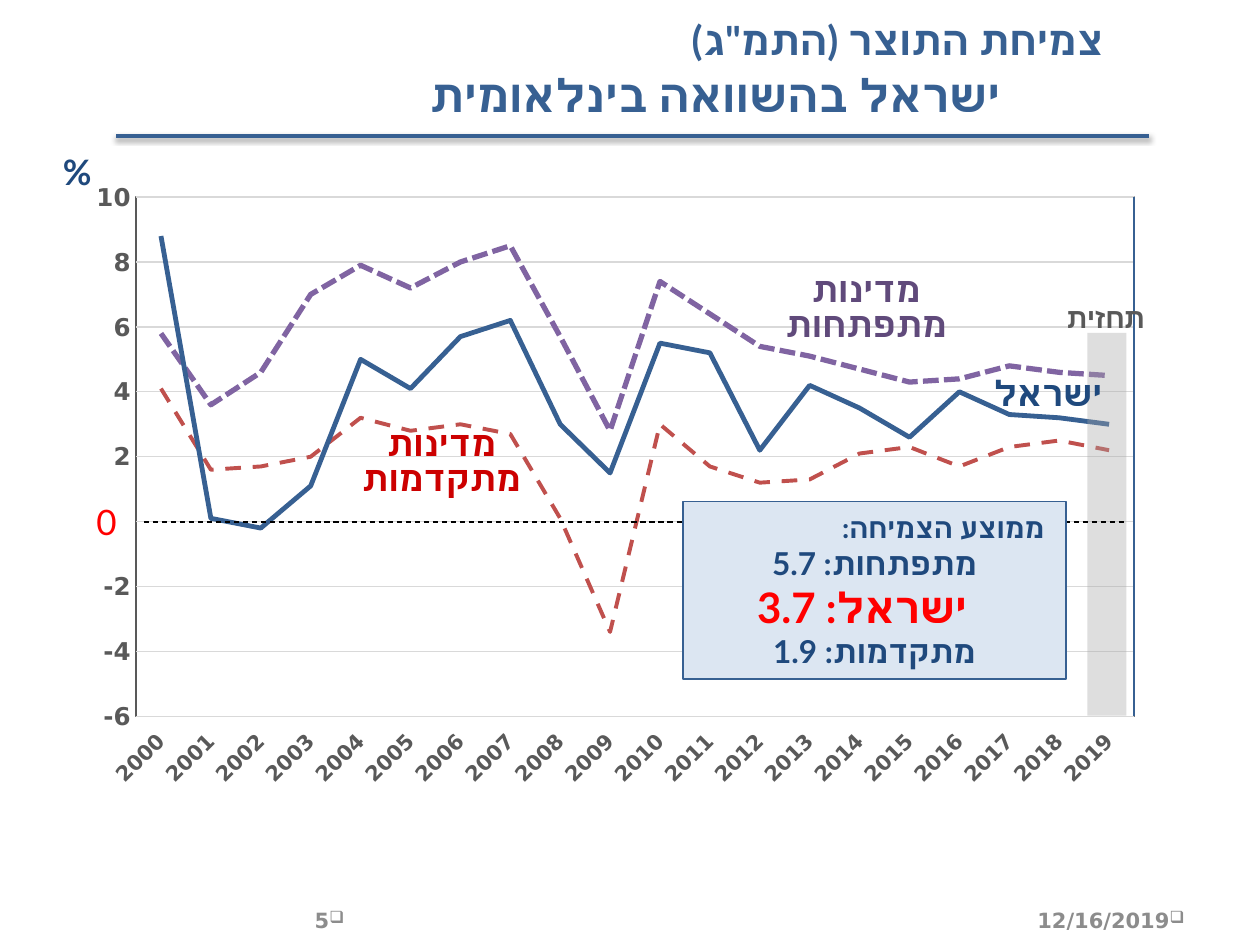
import pptx
import pptx.chart.data
import pptx.dml.color
import pptx.enum.chart
import pptx.enum.dml
import pptx.enum.shapes
import pptx.enum.text
import pptx.oxml
import pptx.oxml.ns
import pptx.util
from dataclasses import dataclass

Cm = pptx.util.Cm
Pt = pptx.util.Pt
ALIGN = pptx.enum.text.PP_ALIGN
ANCHOR = pptx.enum.text.MSO_ANCHOR
DASH = pptx.enum.dml.MSO_LINE


@dataclass(frozen=True)
class Theme:
    blue: str = "376092"
    navy: str = "1F497D"
    red: str = "FF0000"
    advanced: str = "C0504D"
    advanced_label: str = "CC0000"
    emerging: str = "8064A2"
    emerging_label: str = "604A7B"
    axis_text: str = "595959"
    grid: str = "D9D9D9"
    forecast: str = "A6A6A6"
    panel: str = "DCE6F2"
    white: str = "FFFFFF"
    black: str = "000000"
    footer: str = "8C8C8C"
    font: str = "Lato"
    chart_font: str = "DejaVu Sans"
    forecast_font: str = "Arial"
    title: int = 23
    subtitle: int = 26
    highlight: int = 24
    label: int = 20
    body: int = 18
    small: int = 16
    value_axis: int = 14
    category_axis: int = 12


THEME = Theme()
YEARS = [str(year) for year in range(2000, 2020)]
ADVANCED = [4.1, 1.6, 1.7, 2, 3.2, 2.8, 3, 2.7, 0.1, -3.4,
            3, 1.7, 1.2, 1.3, 2.1, 2.3, 1.7, 2.3, 2.5, 2.2]
EMERGING = [5.8, 3.6, 4.6, 7, 7.9, 7.2, 8, 8.5, 5.7, 2.8,
            7.4, 6.4, 5.4, 5.1, 4.7, 4.3, 4.4, 4.8, 4.6, 4.5]
ISRAEL = [8.8, 0.1, -0.2, 1.1, 5, 4.1, 5.7, 6.2, 3, 1.5,
          5.5, 5.2, 2.2, 4.2, 3.5, 2.6, 4, 3.3, 3.2, 3]


def rgb(color):
    return pptx.dml.color.RGBColor.from_string(color)


def xml(tag, body="", **attributes):
    ns = " ".join(pptx.oxml.ns.nsdecls(prefix) for prefix in ("a", "c"))
    values = "".join(f' {key}="{value}"' for key, value in attributes.items())
    return pptx.oxml.parse_xml(f"<{tag} {ns}{values}>{body}</{tag}>")


def style_font(font, size, color, name=THEME.font, bold=True):
    font.size = Pt(size)
    font.bold = bold
    font.color.rgb = rgb(color)
    font.name = name


def style_line(line, color, width, dash=None):
    line.color.rgb = rgb(color)
    line.width = Pt(width)
    if dash:
        line.dash_style = dash


def add_text(paragraph, text, size, color, align=ALIGN.CENTER, rtl=True,
             name=THEME.font, bold=True, spacing=None, start=0, bullet=None):
    paragraph.alignment = align
    properties = paragraph._p.get_or_add_pPr()
    if rtl:
        properties.set("rtl", "1")
    if start:
        properties.set("marL", str(Cm(start)))
    if spacing:
        paragraph.line_spacing = Pt(spacing)
    if bullet:
        properties.append(xml("a:buSzPct", val="80000"))
        properties.append(xml("a:buChar", char=bullet))
    run = paragraph.add_run()
    run.text = text
    style_font(run.font, size, color, name, bold)
    run._r.get_or_add_rPr().append(xml("a:cs", typeface=name))


def add_label(slide, box, text, size, color, anchor=ANCHOR.TOP, **style):
    frame = slide.shapes.add_textbox(*map(Cm, box)).text_frame
    frame.word_wrap = True
    frame.vertical_anchor = anchor
    add_text(frame.paragraphs[0], text, size, color, **style)
    return frame


def add_block(slide, box, fill, outline=None, opacity=None):
    block = slide.shapes.add_shape(
        pptx.enum.shapes.MSO_SHAPE.RECTANGLE, *map(Cm, box))
    block.shadow.inherit = False
    block.fill.solid()
    block.fill.fore_color.rgb = rgb(fill)
    if opacity:
        block.fill._xPr.solidFill[0].append(
            xml("a:alpha", val=opacity * 1000))
    if outline:
        style_line(block.line, outline, 0.75)
    else:
        block.line.fill.background()
    block.text_frame.word_wrap = True
    return block


def add_rule(slide, start, end, color, width, dash=None, shadow=""):
    rule = slide.shapes.add_connector(
        pptx.enum.shapes.MSO_CONNECTOR.STRAIGHT, *map(Cm, start + end))
    style_line(rule.line, color, width, dash)
    rule._element.spPr.append(xml("a:effectLst", shadow))


def add_growth_chart(slide):
    growth = pptx.chart.data.CategoryChartData(number_format="0.0")
    growth.categories = YEARS
    lines = [("Series 1", ADVANCED, THEME.advanced, 2.25, DASH.DASH),
             ("Series 2", EMERGING, THEME.emerging, 3, DASH.SQUARE_DOT),
             ("Series 3", ISRAEL, THEME.blue, 2.75, None)]
    for name, values, *_ in lines:
        growth.add_series(name, values)
    chart = slide.shapes.add_chart(
        pptx.enum.chart.XL_CHART_TYPE.LINE,
        *map(Cm, (0.74, 3.02, 22.76, 13.44)), growth).chart
    chart.has_legend = False
    chart.has_title = False
    style_font(chart.font, 10, THEME.black, THEME.chart_font, False)
    plot = chart.plots[0]
    plot.vary_by_categories = False
    for series, (_, _, color, width, dash) in zip(plot.series, lines):
        series.smooth = False
        series.marker.style = pptx.enum.chart.XL_MARKER_STYLE.NONE
        style_line(series.format.line, color, width, dash)
        if dash == DASH.SQUARE_DOT:
            series.format.line._ln.prstDash.set("val", "sysDash")

    years, percent = chart.category_axis, chart.value_axis
    for axis, size in ((years, THEME.category_axis),
                       (percent, THEME.value_axis)):
        axis.major_tick_mark = pptx.enum.chart.XL_TICK_MARK.NONE
        axis.minor_tick_mark = pptx.enum.chart.XL_TICK_MARK.NONE
        style_font(axis.tick_labels.font, size, THEME.axis_text,
                   THEME.chart_font)
    years.tick_label_position = pptx.enum.chart.XL_TICK_LABEL_POSITION.LOW
    years._element.txPr.bodyPr.set("rot", "-2700000")
    style_line(years.format.line, THEME.grid, 0.75)
    percent.minimum_scale, percent.maximum_scale = -6, 10
    percent.major_unit = 2
    percent.tick_labels.number_format = "0"
    percent.tick_labels.number_format_is_linked = False
    percent.format.line.fill.background()
    style_line(percent.major_gridlines.format.line, THEME.grid, 0.75)

    area = chart._chartSpace.chart.plotArea
    for layout in area.findall(pptx.oxml.ns.qn("c:layout")):
        area.remove(layout)
    area.insert(0, xml("c:layout", '<c:manualLayout><c:layoutTarget val="inner"/>'
                       '<c:xMode val="edge"/><c:yMode val="edge"/>'
                       '<c:x val="0.088"/><c:y val="0.071"/>'
                       '<c:w val="0.884"/><c:h val="0.779"/></c:manualLayout>'))
    area.append(xml("c:spPr", '<a:noFill/><a:ln w="9525"><a:solidFill>'
                    f'<a:srgbClr val="{THEME.axis_text}"/></a:solidFill></a:ln>'))


def add_averages(slide):
    panel = add_block(slide, (13.77, 10.11, 7.72, 3.58), THEME.panel, THEME.blue)
    averages = [("ממוצע הצמיחה:", THEME.small, THEME.navy, ALIGN.RIGHT, 0.18),
                ("מתפתחות: 5.7", THEME.body, THEME.navy, ALIGN.CENTER, 0),
                ("ישראל: 3.7", THEME.highlight, THEME.red, ALIGN.CENTER, 0.5),
                ("מתקדמות: 1.9", THEME.body, THEME.navy, ALIGN.CENTER, 0)]
    frame = panel.text_frame
    for index, (text, size, color, align, start) in enumerate(averages):
        paragraph = frame.add_paragraph() if index else frame.paragraphs[0]
        add_text(paragraph, text, size, color, align, start=start)


def add_heading(slide):
    frame = add_label(slide, (0.08, 0.33, 23.7, 2.11), 'צמיחת התוצר (התמ"ג)',
                      THEME.title, THEME.blue, ANCHOR.MIDDLE,
                      align=ALIGN.RIGHT, spacing=27, start=1.27)
    subtitle = frame.add_paragraph()
    subtitle.space_before = Pt(6)
    add_text(subtitle, "ישראל בהשוואה בינלאומית", THEME.subtitle, THEME.blue,
             ALIGN.RIGHT, spacing=27, start=3.35)


def main():
    deck = pptx.Presentation()
    deck.slide_width, deck.slide_height = Cm(25.4), Cm(19.05)
    slide = deck.slides.add_slide(deck.slide_layouts[6])
    add_rule(slide, (23.16, 2.74), (2.34, 2.74), THEME.blue, 2,
             shadow='<a:outerShdw blurRad="39370" dist="20320" dir="5400000">'
                    f'<a:srgbClr val="{THEME.black}"><a:alpha val="38000"/>'
                    '</a:srgbClr></a:outerShdw>')
    add_growth_chart(slide)
    add_rule(slide, (22.86, 3.97), (22.86, 14.44), THEME.blue, 1)
    add_block(slide, (21.92, 6.71, 0.79, 7.72), THEME.forecast, opacity=37)
    add_label(slide, (20.75, 5.94, 3.1, 0.94), "תחזית", THEME.small,
              THEME.axis_text, name=THEME.forecast_font, rtl=False)
    add_label(slide, (19.58, 7.37, 3.1, 1.12), "ישראל", THEME.label, THEME.navy)
    for left, top, text, color in (
            (6.78, 8.51, "מדינות מתקדמות", THEME.advanced_label),
            (15.34, 5.41, "מדינות מתפתחות", THEME.emerging_label)):
        add_label(slide, (left, top, 4.24, 1.68), text, THEME.label, color,
                  spacing=20)
    add_rule(slide, (2.9, 10.52), (22.73, 10.52), THEME.black, 0.75, DASH.DASH)
    add_averages(slide)
    add_label(slide, (1.02, 2.9, 1.22, 1.12), "%", THEME.label, THEME.navy,
              align=ALIGN.LEFT, rtl=False)
    zero = add_block(slide, (1.63, 9.96, 1.04, 1.12), THEME.white)
    add_text(zero.text_frame.paragraphs[0], "0", THEME.label, THEME.red,
             rtl=False, bold=False)
    add_heading(slide)
    for left, text in ((18.21, "12/16/2019"), (1.27, "5")):
        add_label(slide, (left, 17.65, 5.92, 1.02), text, THEME.category_axis,
                  THEME.footer, ANCHOR.MIDDLE, align=ALIGN.RIGHT,
                  name=THEME.chart_font, spacing=36, bullet="❑")
    deck.save("out.pptx")


if __name__ == "__main__":
    main()
